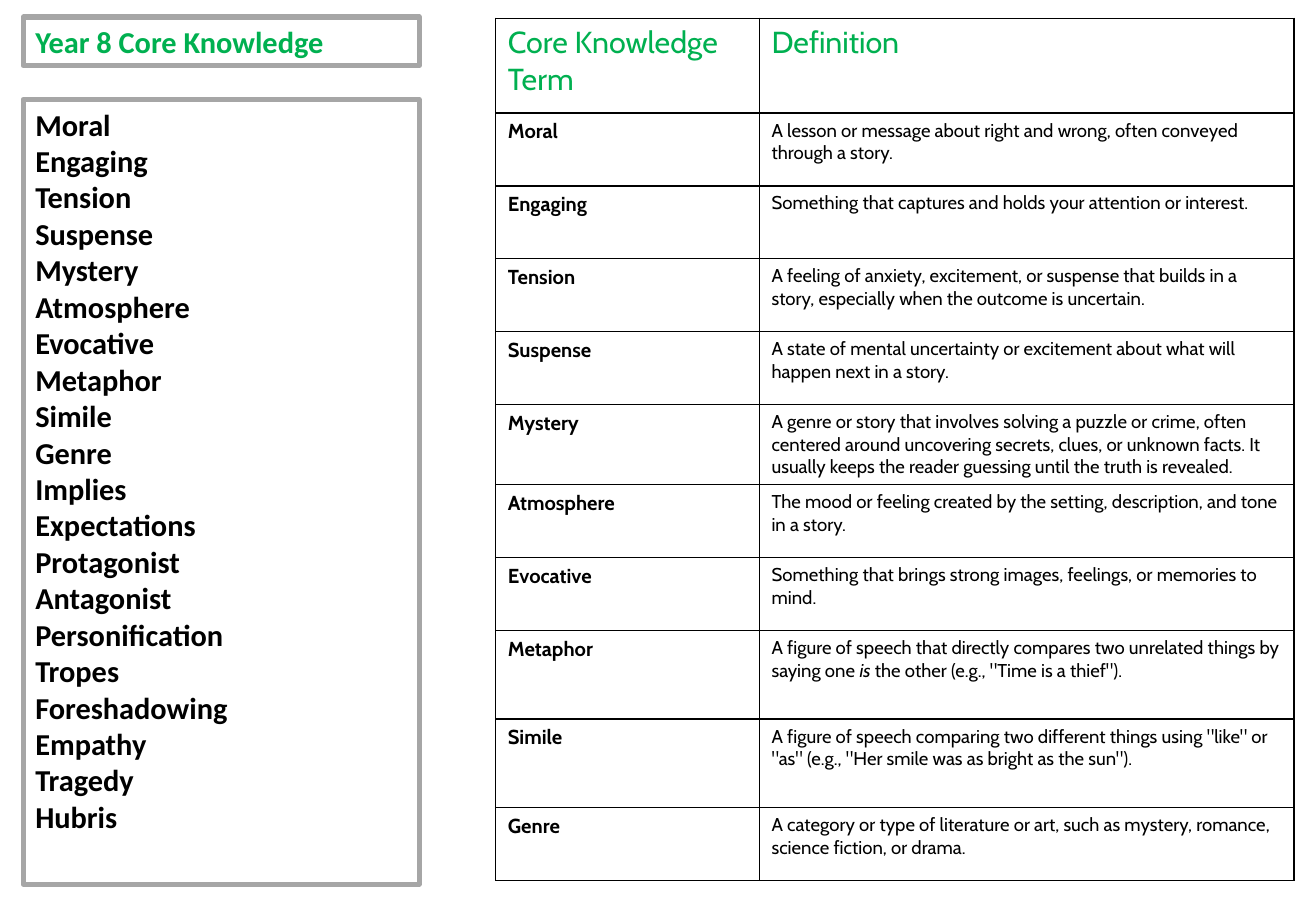
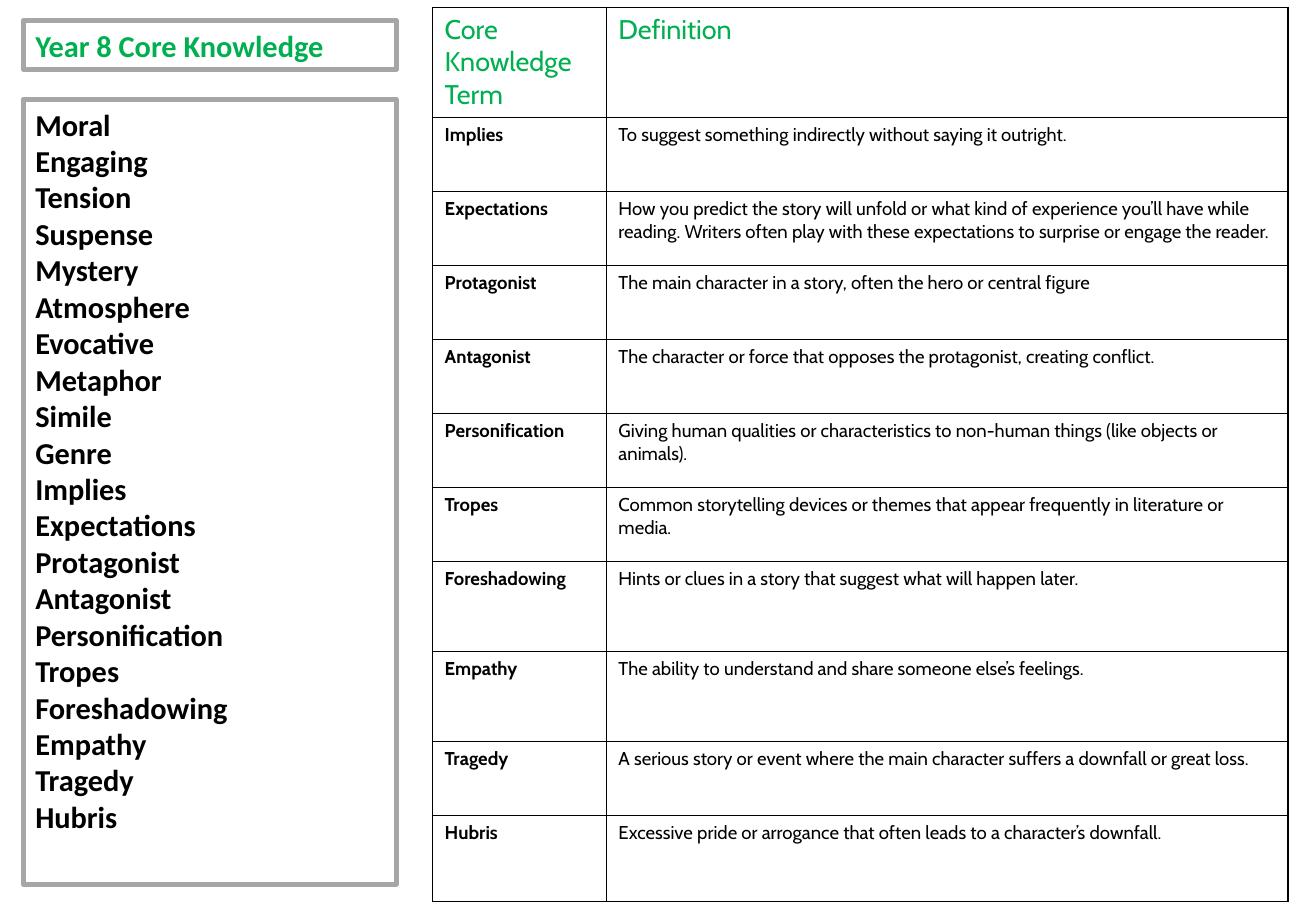
"""Build two Year 8 core knowledge slides: a term list beside a table of definitions."""
from dataclasses import dataclass

from lxml.etree import SubElement
from pptx import Presentation
from pptx.dml.color import RGBColor
from pptx.enum.text import MSO_ANCHOR, MSO_AUTO_SIZE, PP_ALIGN
from pptx.oxml.ns import qn
from pptx.util import Inches, Pt

COLOURS = {"heading": "00B050", "text": "000000", "frame": "A6A6A6", "grid": "000000"}
LIST_FONT = "Calibri"
TABLE_FONT = "Cabin"
TITLE = "Year 8 Core Knowledge"
HEADERS = ("Core Knowledge Term", "Definition")
PANEL_LEFT = 0.19
TITLE_HEIGHT = 0.4
LIST_TOP = 0.82
LIST_HEIGHT = 6.46


@dataclass(frozen=True)
class Entry:
    term: str
    definition: str
    italic: str = ""
    ending: str = ""


@dataclass(frozen=True)
class Page:
    title_top: float
    panel_width: float
    table_left: float
    table_top: float
    columns: tuple[float, float]
    rows: tuple[float, ...]
    header_size: int
    term_size: int
    entries: tuple[Entry, ...]


PAGES = (
    Page(
        0.14, 3.26, 4.08, 0.15, (2.17, 4.4),
        (0.78, *[0.6] * 7, 0.73, 0.73, 0.6), 18, 12,
        (
            Entry("Moral", "A lesson or message about right and wrong, often conveyed through a story."),
            Entry("Engaging", "Something that captures and holds your attention or interest."),
            Entry("Tension", "A feeling of anxiety, excitement, or suspense that builds in a story, "
                  "especially when the outcome is uncertain."),
            Entry("Suspense", "A state of mental uncertainty or excitement about what will happen next in a story."),
            Entry("Mystery", "A genre or story that involves solving a puzzle or crime, often centered around "
                  "uncovering secrets, clues, or unknown facts. It usually keeps the reader guessing until "
                  "the truth is revealed."),
            Entry("Atmosphere", "The mood or feeling created by the setting, description, and tone in a story."),
            Entry("Evocative", "Something that brings strong images, feelings, or memories to mind."),
            Entry("Metaphor", "A figure of speech that directly compares two unrelated things by saying one ",
                  "is", ' the other (e.g., "Time is a thief").'),
            Entry("Simile", 'A figure of speech comparing two different things using "like" or "as" '
                  '(e.g., "Her smile was as bright as the sun").'),
            Entry("Genre", "A category or type of literature or art, such as mystery, romance, "
                  "science fiction, or drama."),
        ),
    ),
    Page(
        0.17, 3.07, 3.56, 0.06, (1.43, 5.61),
        (0.79, *[0.61] * 6, 0.74, 0.74, 0.61, 0.71), 16, 11,
        (
            Entry("Implies", "To suggest something indirectly without saying it outright."),
            Entry("Expectations", "How you predict the story will unfold or what kind of experience you’ll have "
                  "while reading. Writers often play with these expectations to surprise or engage the reader."),
            Entry("Protagonist", "The main character in a story, often the hero or central figure"),
            Entry("Antagonist", "The character or force that opposes the protagonist, creating conflict."),
            Entry("Personification", "Giving human qualities or characteristics to non-human things "
                  "(like objects or animals)."),
            Entry("Tropes", "Common storytelling devices or themes that appear frequently in literature or media."),
            Entry("Foreshadowing", "Hints or clues in a story that suggest what will happen later."),
            Entry("Empathy", "The ability to understand and share someone else’s feelings."),
            Entry("Tragedy", "A serious story or event where the main character suffers a downfall or great loss."),
            Entry("Hubris", "Excessive pride or arrogance that often leads to a character’s downfall."),
        ),
    ),
)
TERMS = [entry.term for page in PAGES for entry in page.entries]


def add_run(paragraph, text: str, font: str, size: int, colour: str,
            bold: bool = False, italic: bool = False) -> None:
    run = paragraph.add_run()
    run.text = text
    run.font.name = font
    run.font.size = Pt(size)
    run.font.bold = bold
    run.font.italic = italic
    run.font.color.rgb = RGBColor.from_string(COLOURS[colour])


def fill_panel(shape, top: float, width: float, height: float, lines: list[str], colour: str) -> None:
    shape.left, shape.top = Inches(PANEL_LEFT), Inches(top)
    shape.width, shape.height = Inches(width), Inches(height)
    shape.line.color.rgb = RGBColor.from_string(COLOURS["frame"])
    shape.line.width = Pt(3)
    frame = shape.text_frame
    frame.word_wrap = True
    frame.auto_size = MSO_AUTO_SIZE.NONE
    frame.vertical_anchor = MSO_ANCHOR.TOP
    for index, line in enumerate(lines):
        paragraph = frame.add_paragraph() if index else frame.paragraphs[0]
        paragraph.alignment = PP_ALIGN.LEFT
        paragraph.space_before = Pt(0)
        properties = paragraph._p.get_or_add_pPr()
        properties.set("marL", "0")
        properties.set("indent", "0")
        SubElement(properties, qn("a:buNone"))
        add_run(paragraph, line, LIST_FONT, 18, colour, bold=True)


def format_cell(cell) -> None:
    properties = cell._tc.get_or_add_tcPr()
    for side in ("L", "R", "T", "B"):
        border = SubElement(properties, qn(f"a:ln{side}"), w=str(Pt(1)))
        fill = SubElement(border, qn("a:solidFill"))
        SubElement(fill, qn("a:srgbClr"), val=COLOURS["grid"])
    cell.fill.background()


def add_definitions(slide, page: Page) -> None:
    shape = slide.shapes.add_table(
        len(page.rows), len(page.columns), Inches(page.table_left), Inches(page.table_top),
        Inches(sum(page.columns)), Inches(sum(page.rows)))
    table = shape.table
    table.first_row = table.horz_banding = False
    for column, width in zip(table.columns, page.columns):
        column.width = Inches(width)
    for row, height in zip(table.rows, page.rows):
        row.height = Inches(height)
    for cell in table.iter_cells():
        format_cell(cell)
    for column, header in enumerate(HEADERS):
        add_run(table.cell(0, column).text_frame.paragraphs[0], header,
                TABLE_FONT, page.header_size, "heading")
    for row, entry in enumerate(page.entries, start=1):
        term, definition = (table.cell(row, column).text_frame.paragraphs[0] for column in range(2))
        add_run(term, entry.term, TABLE_FONT, page.term_size, "text", bold=True)
        for text, italic in ((entry.definition, False), (entry.italic, True), (entry.ending, False)):
            if text:
                add_run(definition, text, TABLE_FONT, 11, "text", italic=italic)


def add_page(presentation, page: Page) -> None:
    slide = presentation.slides.add_slide(presentation.slide_layouts[1])
    fill_panel(slide.shapes.title, page.title_top, page.panel_width, TITLE_HEIGHT, [TITLE], "heading")
    fill_panel(slide.placeholders[1], LIST_TOP, page.panel_width, LIST_HEIGHT, TERMS, "text")
    add_definitions(slide, page)


def main() -> None:
    presentation = Presentation()
    presentation.slide_width, presentation.slide_height = Inches(10.83), Inches(7.5)
    for page in PAGES:
        add_page(presentation, page)
    presentation.save("out.pptx")


if __name__ == "__main__":
    main()
